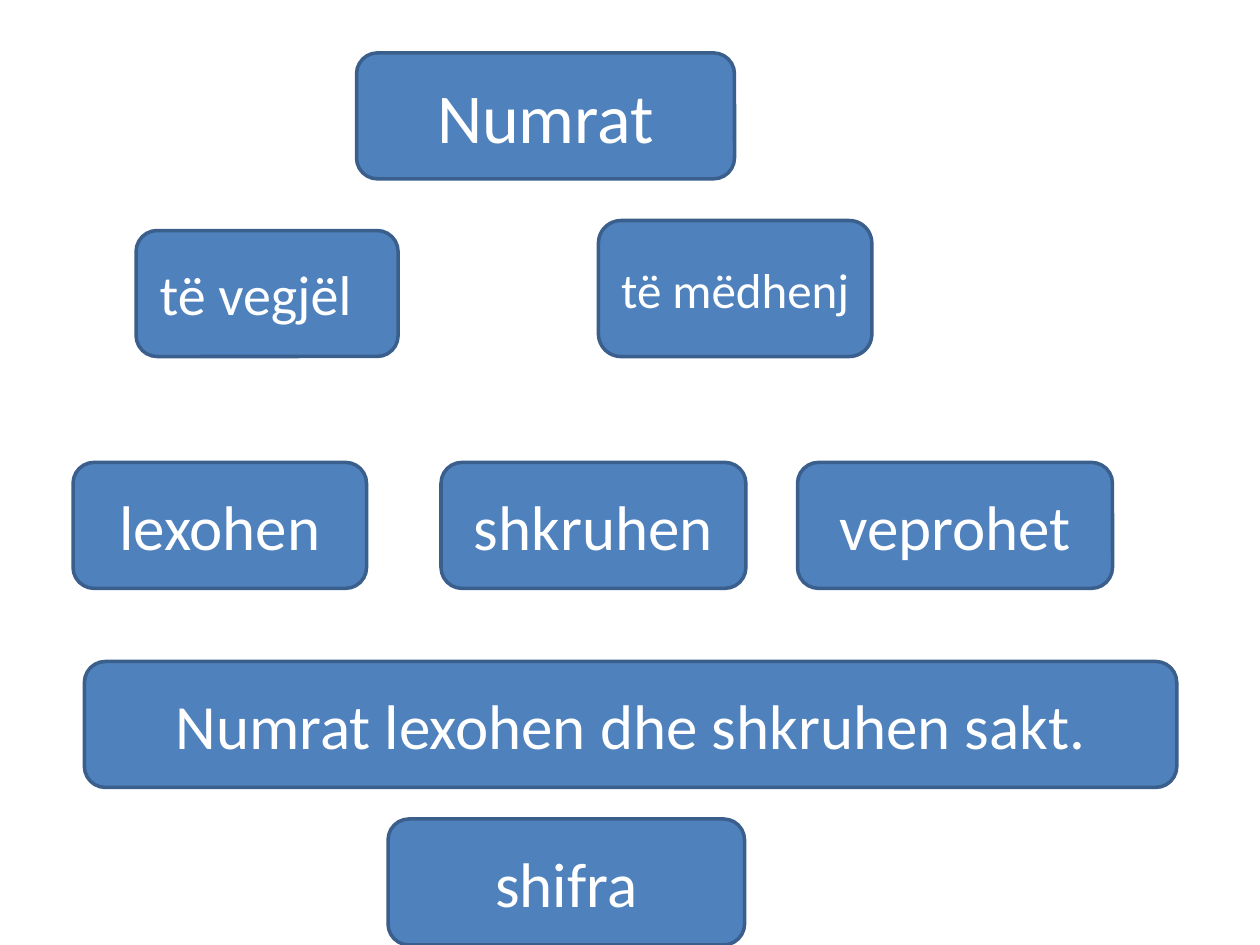
import pptx
import pptx.util
import pptx.dml.color
import pptx.enum.shapes
import pptx.enum.text

Inches, Pt = pptx.util.Inches, pptx.util.Pt

THEME = {
    "font": "Calibri", "fill": "4F81BD", "line": "3A5F8C", "text": "FFFFFF",
    "line_width": 2, "top": 40, "body": 36, "small": 32, "smaller": 28,
}
BOX_HEIGHT = 1

# Each row: top, then boxes of (text, left, width, format)
ROWS = [
    (0.42, [("Numrat", 2.83, 3, {"size": "top"})]),
    (1.83, [("të vegjël", 1.08, 2.08, {"size": "small", "margin_right": 0.28})]),
    (1.75, [("të mëdhenj", 4.75, 2.17, {"size": "smaller", "height": 1.08})]),
    (3.67, [("lexohen", 0.58, 2.33, {}),
            ("shkruhen", 3.5, 2.42, {}),
            ("veprohet", 6.33, 2.5, {})]),
    (5.25, [("Numrat lexohen dhe shkruhen sakt.", 0.67, 8.67, {})]),
    (6.5, [("shifra", 3.08, 2.83, {})]),
]


def rgb(name):
    return pptx.dml.color.RGBColor.from_string(THEME[name])


def add_box(s, text, left, top, width, *, height=BOX_HEIGHT, size="body", margin_right=0.1):
    sp = s.shapes.add_shape(
        pptx.enum.shapes.MSO_SHAPE.ROUNDED_RECTANGLE,
        Inches(left), Inches(top), Inches(width), Inches(height))
    sp.shadow.inherit = False
    sp.fill.solid()
    sp.fill.fore_color.rgb = rgb("fill")
    sp.line.color.rgb = rgb("line")
    sp.line.width = Pt(THEME["line_width"])

    tf = sp.text_frame
    tf.word_wrap = True
    tf.vertical_anchor = pptx.enum.text.MSO_ANCHOR.MIDDLE
    tf.margin_right = Inches(margin_right)
    p = tf.paragraphs[0]
    p.alignment = pptx.enum.text.PP_ALIGN.CENTER
    r = p.add_run()
    r.text = text
    r.font.name = THEME["font"]
    r.font.size = Pt(THEME[size])
    r.font.color.rgb = rgb("text")


def main():
    prs = pptx.Presentation()
    prs.slide_width, prs.slide_height = Inches(10), Inches(7.5)
    s = prs.slides.add_slide(prs.slide_layouts.get_by_name("Blank"))
    for top, boxes in ROWS:
        for text, left, width, fmt in boxes:
            add_box(s, text, left, top, width, **fmt)
    prs.save("out.pptx")


if __name__ == "__main__":
    main()
